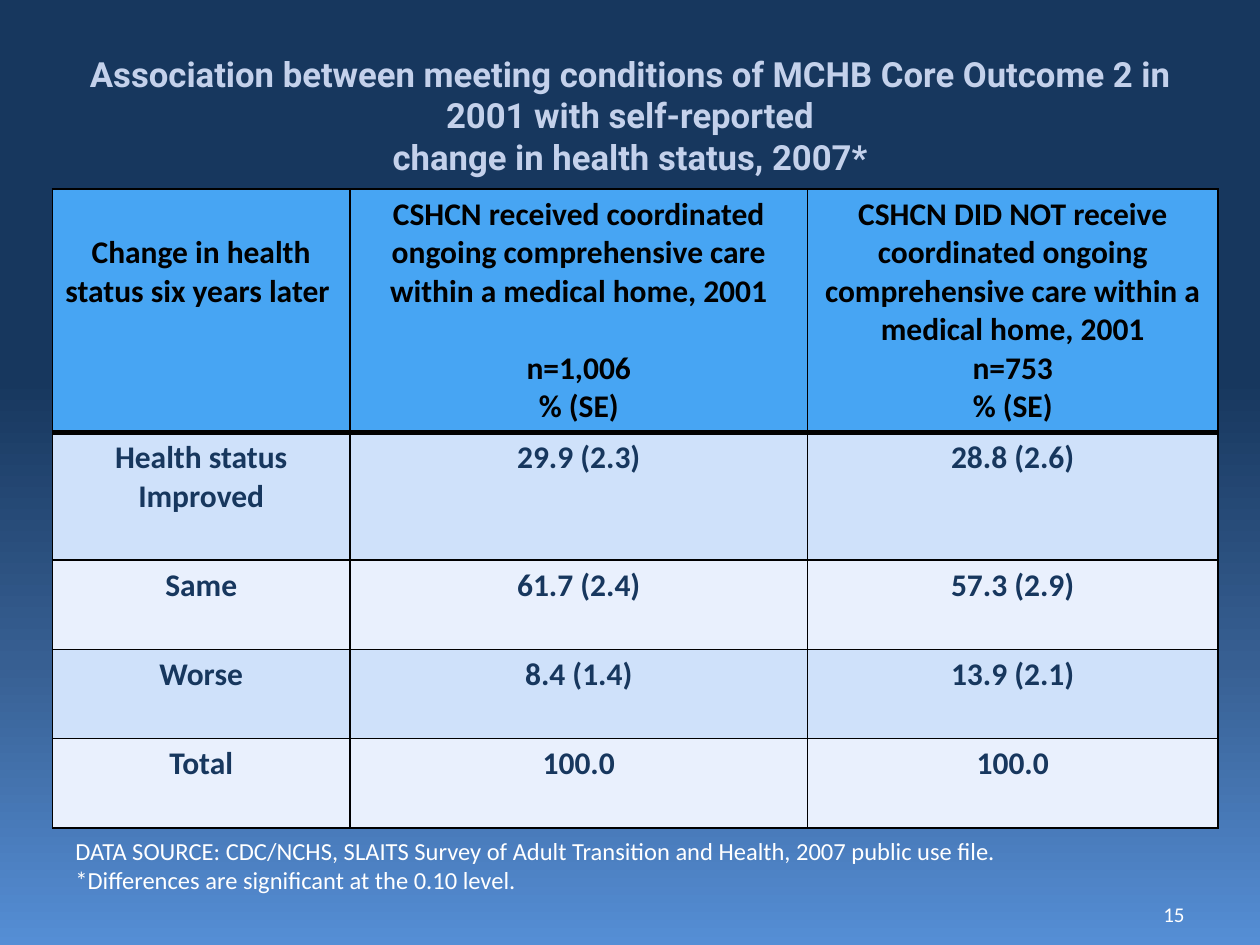
from pptx import Presentation
from pptx.dml.color import RGBColor
from pptx.enum.text import MSO_ANCHOR, MSO_AUTO_SIZE, PP_ALIGN
from pptx.oxml.ns import qn
from pptx.util import Pt
from lxml.etree import SubElement

CENTER, RIGHT, LEFT = PP_ALIGN.CENTER, PP_ALIGN.RIGHT, PP_ALIGN.LEFT
TOP, MIDDLE = MSO_ANCHOR.TOP, MSO_ANCHOR.MIDDLE
NO_FIT = MSO_AUTO_SIZE.NONE

BLACK = RGBColor(0x00, 0x00, 0x00)
WHITE = RGBColor(0xFF, 0xFF, 0xFF)
NAVY = RGBColor(0x17, 0x37, 0x5E)
STEEL = RGBColor(0x37, 0x5F, 0x92)
SKY = RGBColor(0x55, 0x8E, 0xD5)
PALE = RGBColor(0xC4, 0xD1, 0xEB)
HEAD = RGBColor(0x47, 0xA5, 0xF3)
BANDS = (RGBColor(0xCF, 0xE1, 0xFA), RGBColor(0xE9, 0xF0, 0xFD))

STOPS = ((0, NAVY), (40, NAVY), (70, STEEL), (100, SKY))
COLS = (170, 261.5, 234.5)
ROWS = (139, 73, 51, 51, 51)
LINE = 22

TITLE = (
    "Association between meeting conditions of MCHB Core Outcome 2 in 2001 with self-reported\n"
    "change in health status, 2007*"
)
NOTES = (
    "DATA SOURCE: CDC/NCHS, SLAITS Survey of Adult Transition and Health, 2007 public use file.\n"
    "*Differences are significant at the 0.10 level."
)
HEADS = (
    "Change in health status six years later ",
    "CSHCN received coordinated ongoing comprehensive care within a medical home, 2001\n"
    "n=1,006\n% (SE)",
    "CSHCN DID NOT receive coordinated ongoing comprehensive care within a medical home, 2001\n"
    "n=753\n% (SE)",
)
DATA = (
    ("Health status\nImproved", "29.9 (2.3)", "28.8 (2.6)"),
    ("Same", "61.7 (2.4)", "57.3 (2.9)"),
    ("Worse", "8.4 (1.4)", "13.9 (2.1)"),
    ("Total", "100.0", "100.0"),
)


def write(frame, text, size=18, font="Calibri", color=WHITE, bold=False, align=LEFT):
    """Fill a text frame with one formatted paragraph per line of text."""
    frame.word_wrap = True
    for i, line in enumerate(text.split("\n")):
        para = frame.add_paragraph() if i else frame.paragraphs[0]
        para.alignment = align
        para.space_before = Pt(0)
        run = para.add_run()
        run.text = line
        run.font.size = Pt(size)
        run.font.name = font
        run.font.bold = bold
        run.font.color.rgb = color


def paint_back(slide):
    """Give the slide its vertical gradient."""
    fill = slide.background.fill
    fill.gradient()
    fill.gradient_angle = 270
    stops = slide.element.find(".//" + qn("a:gsLst"))
    for old in list(stops):
        stops.remove(old)
    for place, color in STOPS:
        stop = SubElement(stops, qn("a:gs"), pos=str(place * 1000))
        SubElement(stop, qn("a:srgbClr"), val=str(color))


def add_title(slide):
    """Place and format the title."""
    title = slide.shapes.title
    title.left, title.top, title.width, title.height = Pt(36), Pt(0), Pt(648), Pt(90)
    frame = title.text_frame
    frame.auto_size = NO_FIT
    frame.vertical_anchor = TOP
    frame.margin_top = Pt(30)
    write(frame, TITLE, size=19.8, font="Roboto", color=PALE, bold=True, align=CENTER)


def add_text(slide, box, text, anchor=TOP, **style):
    """Add a text box."""
    frame = slide.shapes.add_textbox(*map(Pt, box)).text_frame
    frame.vertical_anchor = anchor
    write(frame, text, **style)


def add_edge(cell, side, width):
    """Draw one black border of a cell."""
    edge = SubElement(cell._tc.get_or_add_tcPr(), qn("a:" + side), w=str(Pt(width)))
    SubElement(SubElement(edge, qn("a:solidFill")), qn("a:srgbClr"), val=str(BLACK))


def fill_cell(cell, text, back, color, top=1, base=1):
    """Write, border and fill one cell."""
    write(cell.text_frame, text, color=color, bold=True, align=CENTER)
    for side, width in (("lnL", 1), ("lnR", 1), ("lnT", top), ("lnB", base)):
        add_edge(cell, side, width)
    cell.fill.solid()
    cell.fill.fore_color.rgb = back


def add_grid(slide):
    """Add the table of health status by care received."""
    box = map(Pt, (30, 108, sum(COLS), sum(ROWS)))
    table = slide.shapes.add_table(len(ROWS), len(COLS), *box).table
    for col, width in zip(table.columns, COLS):
        col.width = Pt(width)
    for row, height in zip(table.rows, ROWS):
        row.height = Pt(height)
    for c, text in enumerate(HEADS):
        fill_cell(table.cell(0, c), text, HEAD, BLACK, base=3)
    table.cell(0, 0).margin_top = Pt(3.6 + LINE)
    table.cell(0, 1).text_frame.paragraphs[1].space_before = Pt(LINE)
    for r, row in enumerate(DATA):
        for c, text in enumerate(row):
            top = 1 if r else 3
            fill_cell(table.cell(r + 1, c), text, BANDS[r % 2], NAVY, top=top)


def main():
    """Build and save the slide."""
    deck = Presentation()
    deck.slide_width, deck.slide_height = Pt(720), Pt(540)
    slide = deck.slides.add_slide(deck.slide_layouts[5])
    paint_back(slide)
    add_title(slide)
    add_grid(slide)
    add_text(slide, (516, 516, 168, 13), "15", anchor=MIDDLE, size=12, align=RIGHT)
    add_text(slide, (36, 474, 660, 41), NOTES, size=14)
    deck.save("out.pptx")


if __name__ == "__main__":
    main()
